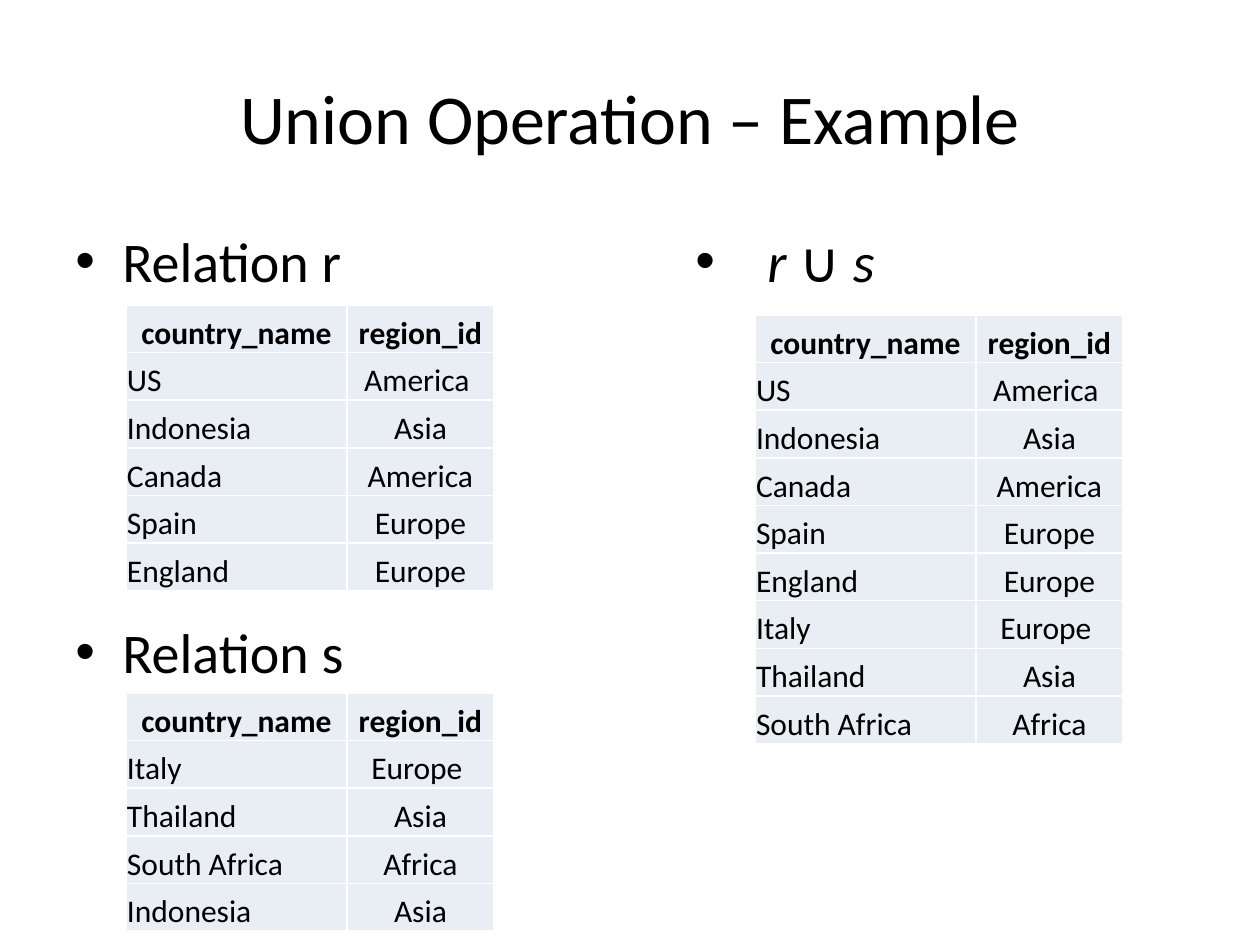
from dataclasses import dataclass

from lxml.etree import SubElement
from pptx import Presentation
from pptx.dml.color import RGBColor
from pptx.enum.text import MSO_ANCHOR, PP_ALIGN
from pptx.oxml.ns import qn
from pptx.util import Emu, Pt

EMU_PER_PX = 914400 // 126


@dataclass(frozen=True)
class Theme:
    font: str = "Calibri"
    ink: str = "000000"
    cell: str = "E9EDF4"
    border: str = "FFFFFF"
    title: int = 40
    body: int = 32
    table: int = 18


THEME = Theme()
HEADER = ("country_name", "region_id")
RELATION_R = [
    ("US", "America "),
    ("Indonesia", "Asia"),
    ("Canada", "America"),
    ("Spain", "Europe"),
    ("England", "Europe"),
]
RELATION_S = [
    ("Italy", "Europe "),
    ("Thailand", "Asia"),
    ("South Africa", "Africa"),
    ("Indonesia", "Asia"),
]
UNION = RELATION_R + [row for row in RELATION_S if row not in RELATION_R]


def px(length):
    return Emu(length * EMU_PER_PX)


def write(paragraph, text, size=THEME.body, bold=False, italic=False,
          align=PP_ALIGN.LEFT):
    """Append one formatted run to the paragraph."""
    paragraph.alignment = align
    run = paragraph.add_run()
    run.text = text
    font = run.font
    font.name, font.size = THEME.font, Pt(size)
    font.bold, font.italic = bold, italic
    font.color.rgb = RGBColor.from_string(THEME.ink)


def add_text_frame(slide, left, top, width, height, anchor=MSO_ANCHOR.TOP):
    frame = slide.shapes.add_textbox(
        px(left), px(top), px(width), px(height)).text_frame
    frame.word_wrap = True
    frame.vertical_anchor = anchor
    return frame


def make_bullet(paragraph, indent):
    properties = paragraph._p.get_or_add_pPr()
    properties.set("marL", str(px(indent)))
    properties.set("indent", str(-px(indent)))
    SubElement(properties, qn("a:buFont"), typeface="Arial")
    SubElement(properties, qn("a:buChar"), char="•")


def add_borders(cell):
    properties = cell._tc.get_or_add_tcPr()
    for position, side in enumerate(("lnL", "lnR", "lnT", "lnB")):
        line = SubElement(properties, qn(f"a:{side}"), w=str(Pt(1)))
        fill = SubElement(line, qn("a:solidFill"))
        SubElement(fill, qn("a:srgbClr"), val=THEME.border)
        properties.insert(position, line)


def fill_cell(cell, text, bold, align):
    cell.fill.solid()
    cell.fill.fore_color.rgb = RGBColor.from_string(THEME.cell)
    cell.margin_left = cell.margin_right = cell.margin_top = px(1)
    cell.margin_bottom = 0
    cell.vertical_anchor = MSO_ANCHOR.BOTTOM
    write(cell.text_frame.paragraphs[0], text, size=THEME.table,
          bold=bold, align=align)
    add_borders(cell)


def add_relation(slide, left, top, rows):
    """Draw a relation as a table below its header row."""
    records = [HEADER, *rows]
    widths = (221, 147)
    row_height = px(143) // 3
    table = slide.shapes.add_table(
        len(records), len(HEADER), px(left), px(top),
        px(sum(widths)), Emu(row_height * len(records))).table
    table.first_row = table.horz_banding = False
    for column, width in zip(table.columns, widths):
        column.width = px(width)
    for r, record in enumerate(records):
        table.rows[r].height = Emu(row_height)
        for c, value in enumerate(record):
            is_header = r == 0
            align = PP_ALIGN.CENTER if is_header or c else PP_ALIGN.LEFT
            fill_cell(table.cell(r, c), value, is_header, align)


def main():
    deck = Presentation()
    deck.slide_width, deck.slide_height = px(1260), px(945)
    slide = deck.slides.add_slide(deck.slide_layouts[6])

    # Title
    title = add_text_frame(slide, 63, 38, 1134, 157, MSO_ANCHOR.MIDDLE)
    write(title.paragraphs[0], "Union Operation – Example",
          size=THEME.title, align=PP_ALIGN.CENTER)

    # Left column: the two operands, spaced to leave room for relation r
    operands = add_text_frame(slide, 63, 220, 630, 624)
    operand_r, operand_s = operands.paragraphs[0], operands.add_paragraph()
    operand_s.space_before = Pt(185)
    for operand, label in ((operand_r, "Relation r"), (operand_s, "Relation s")):
        make_bullet(operand, 47)
        write(operand, label)
    add_relation(slide, 126, 305, RELATION_R)
    add_relation(slide, 126, 693, RELATION_S)

    # Right column: the union
    union = add_text_frame(slide, 683, 220, 630, 624).paragraphs[0]
    make_bullet(union, 72)
    for symbol, italic in (("r ", True), ("∪ ", False), ("s", True)):
        write(union, symbol, italic=italic)
    add_relation(slide, 755, 315, UNION)

    deck.save("out.pptx")


if __name__ == "__main__":
    main()
